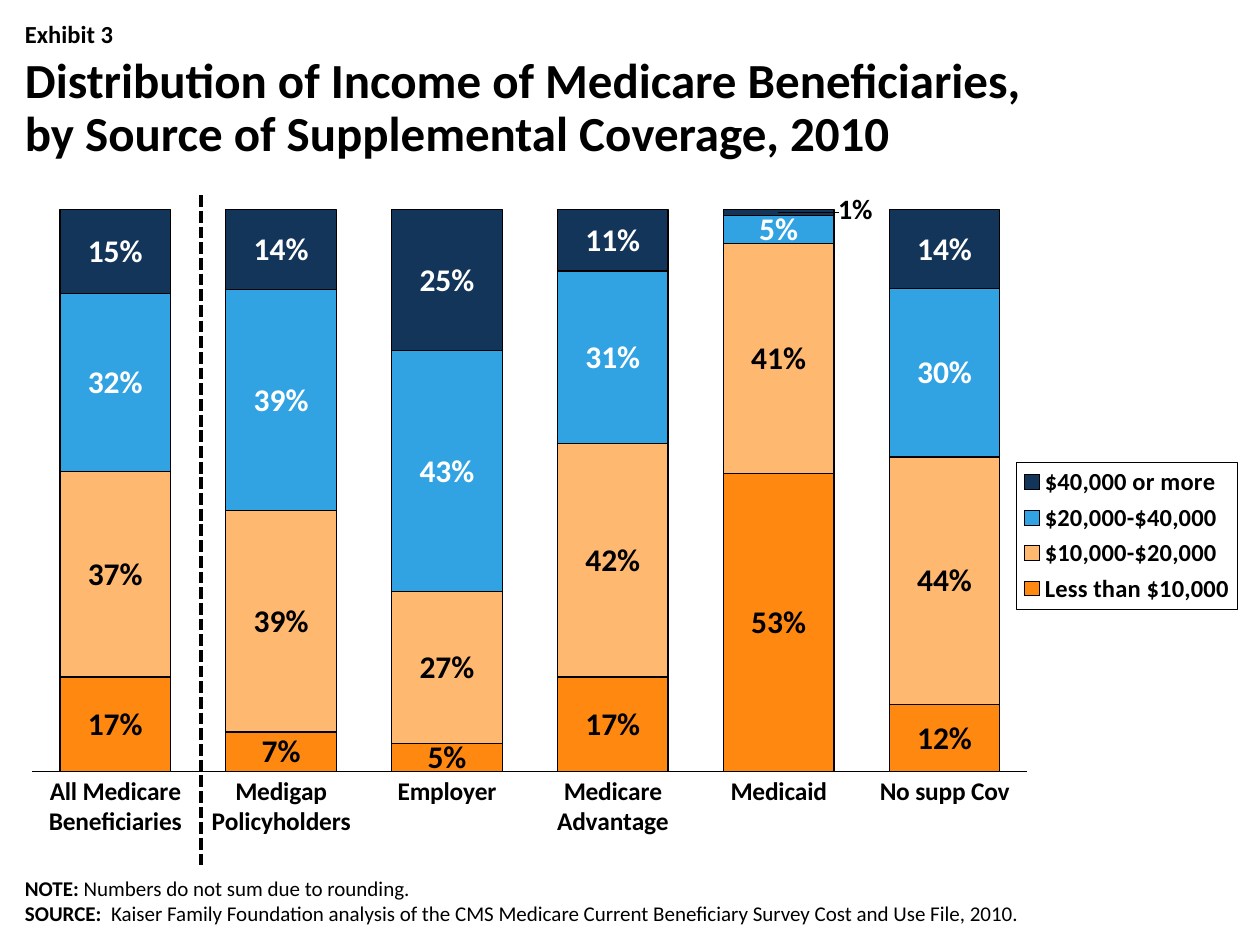
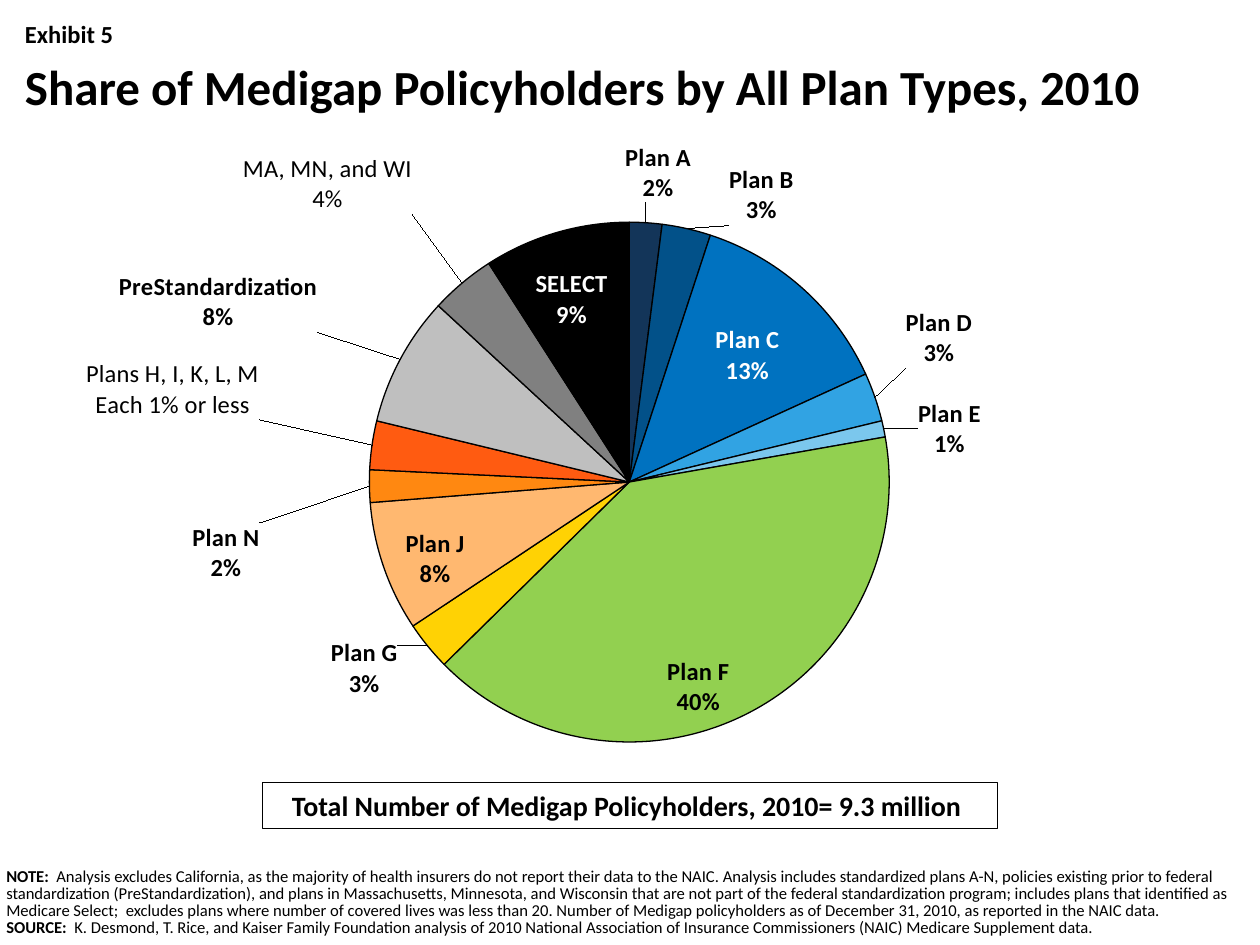
import math
from dataclasses import dataclass

from lxml import etree
from pptx import Presentation
from pptx.chart.data import CategoryChartData
from pptx.dml.color import RGBColor
from pptx.enum.chart import (XL_CHART_TYPE, XL_LABEL_POSITION,
                             XL_LEGEND_POSITION, XL_TICK_MARK)
from pptx.enum.dml import MSO_LINE
from pptx.enum.shapes import MSO_CONNECTOR
from pptx.enum.text import MSO_ANCHOR, PP_ALIGN
from pptx.oxml import parse_xml
from pptx.oxml.ns import nsdecls, qn
from pptx.util import Pt

STACKED, PIE = XL_CHART_TYPE.COLUMN_STACKED_100, XL_CHART_TYPE.PIE
LABEL_CENTER = XL_LABEL_POSITION.CENTER
LEGEND_RIGHT = XL_LEGEND_POSITION.RIGHT
NO_TICKS = XL_TICK_MARK.NONE
DASHED = MSO_LINE.SQUARE_DOT
STRAIGHT = MSO_CONNECTOR.STRAIGHT
TOP, MIDDLE, BOTTOM = MSO_ANCHOR.TOP, MSO_ANCHOR.MIDDLE, MSO_ANCHOR.BOTTOM
LEFT, CENTER = PP_ALIGN.LEFT, PP_ALIGN.CENTER

FONT = "Calibri"
BLACK = RGBColor(0x00, 0x00, 0x00)
WHITE = RGBColor(0xFF, 0xFF, 0xFF)
NAVY = RGBColor(0x13, 0x35, 0x59)
DEEP_BLUE = RGBColor(0x02, 0x51, 0x89)
BLUE = RGBColor(0x00, 0x72, 0xC0)
SKY = RGBColor(0x31, 0xA3, 0xE3)
PALE_BLUE = RGBColor(0x7B, 0xC7, 0xED)
GREEN = RGBColor(0x92, 0xD0, 0x50)
YELLOW = RGBColor(0xFF, 0xD2, 0x04)
PEACH = RGBColor(0xFF, 0xB8, 0x70)
ORANGE = RGBColor(0xFF, 0x88, 0x11)
RED_ORANGE = RGBColor(0xFF, 0x5B, 0x11)
SILVER = RGBColor(0xBF, 0xBF, 0xBF)
GRAY = RGBColor(0x80, 0x80, 0x80)

PIE_FRAME = (7.2, 66.24, 705.6, 374.4)
PIE_CENTER = (360, 275.4)
PIE_RADIUS = 148.6


@dataclass(frozen=True)
class IncomeBand:
    name: str
    shares: tuple[float, ...]
    color: RGBColor
    label_color: RGBColor


@dataclass(frozen=True)
class Plan:
    """One pie slice; label_center is the middle of its label on the slide."""
    name: str
    share: int
    color: RGBColor
    label_center: tuple[float, float]
    label_color: RGBColor = BLACK
    label_lines: tuple[str, ...] = ()


COVERAGE = ("All Medicare Beneficiaries", "Medigap\nPolicyholders", "Employer",
            "Medicare Advantage", "Medicaid", "No supp Cov")
MEDICAID = COVERAGE.index("Medicaid")
BANDS = (
    IncomeBand("Less than $10,000", (.17, .07, .05, .17, .53, .12), ORANGE, BLACK),
    IncomeBand("$10,000-$20,000", (.37, .39, .27, .42, .41, .44), PEACH, BLACK),
    IncomeBand("$20,000-$40,000", (.32, .39, .43, .31, .05, .30), SKY, WHITE),
    IncomeBand("$40,000 or more", (.15, .14, .25, .11, .01, .14), NAVY, WHITE),
)
PLANS = (
    Plan("Plan A", 2, NAVY, (376.5, 98.5)),
    Plan("Plan B", 3, DEEP_BLUE, (435.5, 111.5)),
    Plan("Plan C", 13, BLUE, (427.5, 203), WHITE),
    Plan("Plan D", 3, SKY, (537, 193)),
    Plan("Plan E", 1, PALE_BLUE, (543, 245)),
    Plan("Plan F", 40, GREEN, (399.5, 392.5)),
    Plan("Plan G", 3, YELLOW, (208.5, 382)),
    Plan("Plan J", 8, PEACH, (249, 319.5)),
    Plan("Plan N", 2, ORANGE, (129.5, 316)),
    Plan("Plans H, I, K, L, and M", 3, RED_ORANGE, (99, 222.5),
         label_lines=("Plans H, I, K, L, M", "Each 1% or less")),
    Plan("PreStandardization", 8, SILVER, (125, 172.5)),
    Plan("Other", 4, GRAY, (187.5, 105), label_lines=("MA, MN, and WI", "4%")),
    Plan("SELECT", 9, BLACK, (327, 171), WHITE),
)


def add_text(slide, frame, paragraphs, *, size, bold=False, align=LEFT,
             anchor=TOP, spacing=1.0, inset=7.2, border=False):
    """Add a text box; a paragraph is a string or a list of (text, bold)."""
    box = slide.shapes.add_textbox(*map(Pt, frame))
    if border:
        box.line.color.rgb = BLACK
        box.line.width = Pt(0.75)
    text = box.text_frame
    text.word_wrap = True
    text.vertical_anchor = anchor
    text.margin_left = text.margin_right = Pt(inset)
    text.margin_top = text.margin_bottom = Pt(3.6)
    for number, content in enumerate(paragraphs):
        paragraph = text.paragraphs[0] if number == 0 else text.add_paragraph()
        paragraph.alignment = align
        paragraph.line_spacing = spacing
        runs = [(content, bold)] if isinstance(content, str) else content
        for words, is_bold in runs:
            run = paragraph.add_run()
            run.text = words
            set_font(run.font, size, bold=is_bold)


def set_font(font, size: float, color: RGBColor = BLACK, bold: bool = True) -> None:
    font.name, font.size, font.bold = FONT, Pt(size), bold
    font.color.rgb = color


def add_line(slide, start, end, width: float, dash) -> None:
    line = slide.shapes.add_connector(STRAIGHT, *map(Pt, (*start, *end)))
    line.line.color.rgb = BLACK
    line.line.width = Pt(width)
    line.line.dash_style = dash
    etree.SubElement(line._element.spPr, qn("a:effectLst"))


def set_layout(parent, index: int, x: float, y: float, size=None, inner=False) -> None:
    """Place a chart part by fractions of the chart; no size means an offset."""
    old = parent.find(qn("c:layout"))
    if old is not None:
        parent.remove(old)
    values = []
    if inner:
        values.append(("layoutTarget", "inner"))
    if size:
        values += [("xMode", "edge"), ("yMode", "edge")]
    values += [("x", x), ("y", y)]
    if size:
        values += [("w", size[0]), ("h", size[1])]
    body = "".join(f'<c:{tag} val="{value}"/>' for tag, value in values)
    parent.insert(index, parse_xml(
        f'<c:layout {nsdecls("c")}><c:manualLayout>{body}</c:manualLayout></c:layout>'))


def paint(format_, color: RGBColor) -> None:
    format_.fill.solid()
    format_.fill.fore_color.rgb = color
    format_.line.color.rgb = BLACK
    format_.line.width = Pt(0.75)


def add_chart(slide, kind, frame, categories, series, plot_layout):
    data = CategoryChartData()
    data.categories = categories
    for name, values in series:
        data.add_series(name, values)
    chart = slide.shapes.add_chart(kind, *map(Pt, frame), data).chart
    chart.has_title = False
    chart.has_legend = False
    set_font(chart.font, 18)
    x, y, width, height = plot_layout
    plot_area = chart._chartSpace.chart.plotArea
    set_layout(plot_area, 0, x, y, (width, height), inner=True)
    return chart


def add_exhibit(deck, number: int, title: list[str], spacing: float):
    slide = deck.slides.add_slide(deck.slide_layouts[6])
    add_text(slide, (7.2, 7.2, 705.6, 24.5), [f"Exhibit {number}"], size=14, bold=True)
    add_text(slide, (7.2, 28.8, 705.6, 72), title, size=28, bold=True, spacing=spacing)
    return slide


def add_legend(chart) -> None:
    chart.has_legend = True
    legend = chart.legend
    legend.position = LEGEND_RIGHT
    legend.include_in_layout = False
    set_font(legend.font, 14)
    element = legend._element
    set_layout(element, 1, 0.813, 0.394, (0.179, 0.212))
    element.find(qn("c:overlay")).addnext(parse_xml(
        f'<c:spPr {nsdecls("c", "a")}><a:ln w="3175"><a:solidFill>'
        f'<a:srgbClr val="{BLACK}"/></a:solidFill></a:ln></c:spPr>'))


def hide_leader_lines(labels) -> None:
    labels._element.append(parse_xml(
        f'<c:extLst {nsdecls("c")}><c:ext uri="{{CE6537A1-D6FC-4f65-9D91-7224C49458BB}}" '
        'xmlns:c15="http://schemas.microsoft.com/office/drawing/2012/chart">'
        '<c15:showLeaderLines val="0"/></c:ext></c:extLst>'))


def add_income_chart(slide) -> None:
    chart = add_chart(slide, STACKED, (7.2, 108, 705.6, 396), COVERAGE,
                      [(band.name, band.shares) for band in BANDS],
                      (0.016, 0.03, 0.806, 0.811))
    plot = chart.plots[0]
    plot.gap_width, plot.overlap = 50, 100
    plot.vary_by_categories = False
    for band, series in zip(BANDS, plot.series):
        paint(series.format, band.color)
        labels = series.data_labels
        labels.show_value = True
        labels.number_format, labels.number_format_is_linked = "0%", False
        set_font(labels.font, 18, band.label_color)
        hide_leader_lines(labels)

    top_label = plot.series[-1].points[MEDICAID].data_label
    set_font(top_label.font, 16)
    top_element = top_label._get_or_add_dLbl()
    set_layout(top_element, 1, 0.062, -0.003)
    top_element.find(qn("c:layout")).addnext(parse_xml(
        f'<c:numFmt {nsdecls("c")} formatCode="0%" sourceLinked="0"/>'))

    chart.value_axis.visible = False
    chart.value_axis.has_major_gridlines = False
    chart.value_axis.maximum_scale = 1
    axis = chart.category_axis
    axis.major_tick_mark = NO_TICKS
    axis.format.line.color.rgb = BLACK
    axis.format.line.width = Pt(0.75)
    set_font(axis.tick_labels.font, 14.5)
    add_legend(chart)


def label_slice(point, plan: Plan, middle_angle: float) -> None:
    """Show category and percentage, moved from mid-slice to the label centre."""
    label = point.data_label
    if plan.label_lines:
        text = label.text_frame
        for number, line in enumerate(plan.label_lines):
            paragraph = text.paragraphs[0] if number == 0 else text.add_paragraph()
            run = paragraph.add_run()
            run.text = line
            set_font(run.font, 14, plan.label_color, bold=False)
    else:
        set_font(label.font, 14, plan.label_color)
    label.position = LABEL_CENTER
    element = label._get_or_add_dLbl()
    for tag, shown in (("showVal", 0), ("showCatName", 1), ("showPercent", 1)):
        element.find(qn(f"c:{tag}")).set("val", str(shown))
    etree.SubElement(element, qn("c:separator")).text = "\n"
    default_x = PIE_CENTER[0] + PIE_RADIUS / 2 * math.sin(middle_angle)
    default_y = PIE_CENTER[1] - PIE_RADIUS / 2 * math.cos(middle_angle)
    set_layout(element, 1,
               round((plan.label_center[0] - default_x) / PIE_FRAME[2], 4),
               round((plan.label_center[1] - default_y) / PIE_FRAME[3], 4))


def add_plan_chart(slide) -> None:
    left, top, width, height = PIE_FRAME
    center_x, center_y = PIE_CENTER
    plot_layout = (round((center_x - PIE_RADIUS - left) / width, 3),
                   round((center_y - PIE_RADIUS - top) / height, 3),
                   round(2 * PIE_RADIUS / width, 3),
                   round(2 * PIE_RADIUS / height, 3))
    chart = add_chart(slide, PIE, PIE_FRAME, [plan.name for plan in PLANS],
                      [("Series 1", [plan.share for plan in PLANS])], plot_layout)
    chart.plots[0].vary_by_categories = True
    series = chart.plots[0].series[0]
    labels = series.data_labels
    labels.show_value = False
    leaders = labels._element.find(qn("c:showLeaderLines"))
    if leaders is None:
        leaders = etree.SubElement(labels._element, qn("c:showLeaderLines"))
    leaders.set("val", "1")
    total = sum(plan.share for plan in PLANS)
    passed = 0
    for number, plan in enumerate(PLANS):
        point = series.points[number]
        paint(point.format, plan.color)
        label_slice(point, plan, 2 * math.pi * (passed + plan.share / 2) / total)
        passed += plan.share


def main() -> None:
    deck = Presentation()
    deck.slide_width, deck.slide_height = Pt(720), Pt(540)

    income = add_exhibit(deck, 3, ["Distribution of Income of Medicare Beneficiaries,",
                                   "by Source of Supplemental Coverage, 2010"], 0.9)
    add_income_chart(income)
    add_line(income, (114.8, 111.6), (114.8, 496), 2.25, DASHED)
    add_text(income, (7.2, 489.6, 655.2, 43.2), [
        [("NOTE:", True), (" Numbers do not sum due to rounding.", False)],
        [("SOURCE:  ", True),
         ("Kaiser Family Foundation analysis of the CMS Medicare Current "
          "Beneficiary Survey Cost and Use File, 2010.", False)],
    ], size=12, anchor=BOTTOM)

    plans = add_exhibit(deck, 5, ["Share of Medigap Policyholders by All Plan Types, 2010"], 1.0)
    add_plan_chart(plans)
    add_text(plans, (150, 447, 420, 26.6),
             ["Total Number of Medigap Policyholders, 2010= 9.3 million "],
             size=16, bold=True, align=CENTER, anchor=MIDDLE, border=True)
    add_text(plans, (0, 493.2, 720, 46.8), [
        [("NOTE:  ", True),
         ("Analysis excludes California, as the majority of health insurers do not "
          "report their data to the NAIC. Analysis includes standardized plans A-N, "
          "policies existing prior to federal standardization (PreStandardization), "
          "and plans in Massachusetts, Minnesota, and Wisconsin that are not part of "
          "the federal standardization program; includes plans that identified as "
          "Medicare Select;  excludes plans where number of covered lives was less "
          "than 20. Number of Medigap policyholders as of December 31, 2010, as "
          "reported in the NAIC data.", False)],
        [("SOURCE: ", True),
         (" K. Desmond, T. Rice, and Kaiser Family Foundation analysis of 2010 "
          "National Association of Insurance Commissioners (NAIC) Medicare "
          "Supplement data.", False)],
    ], size=9.5, spacing=0.85, inset=3.6)
    deck.save("out.pptx")


if __name__ == "__main__":
    main()
